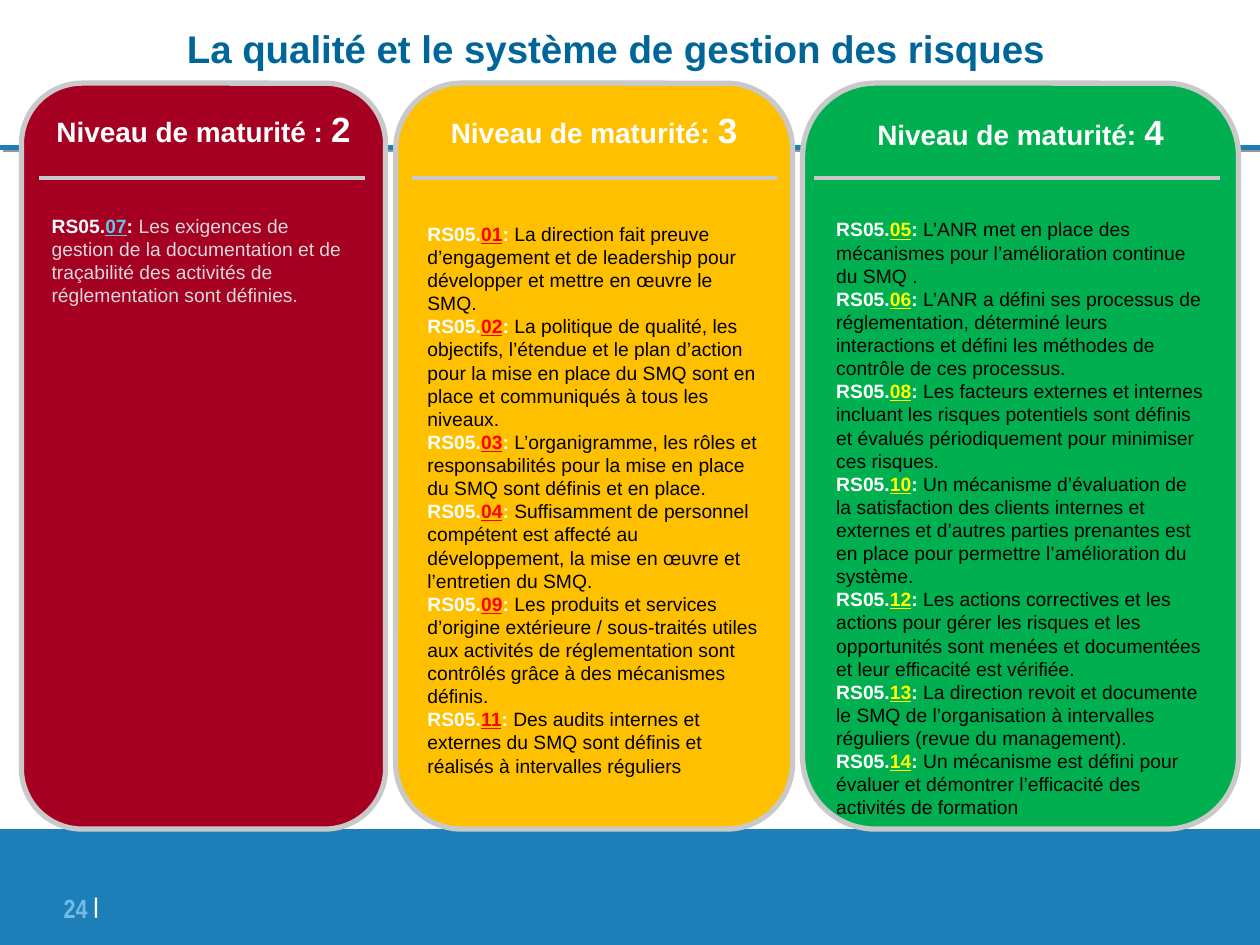
from pptx import Presentation, util as u
from pptx.dml.color import RGBColor
from pptx.enum import shapes, text
from pptx.oxml import parse_xml
from pptx.oxml.ns import nsdecls
from pptx.util import Inches

COLORS = {
    "white": "FFFFFF", "blue": "1E7FB8", "sky": "72BBE8", "title": "006699",
    "glow": "A6D8F3", "shade": "969696", "edge": "C9C9C9", "pale": "D9D9D9",
    "black": "000000", "crimson": "A50021", "amber": "FFC000", "green": "00B050",
    "cyan": "66C4EB", "red": "FF0000", "yellow": "FFFF00",
}

LEVELS = [
    dict(left=0.17, width=2.89, rule=(0.31, 2.9), fill="crimson", label="Niveau de maturité : ",
         level="2", gap=11, number="cyan", body="pale", items=[
             ("07", "Les exigences de gestion de la documentation et de traçabilité des activités "
                    "de réglementation sont définies."),
         ]),
    dict(left=3.14, width=3.15, rule=(3.27, 6.17), fill="amber", label="Niveau de maturité: ",
         level="3", gap=14, number="red", body="black", items=[
             ("01", "La direction fait preuve d’engagement et de leadership pour développer et "
                    "mettre en œuvre le SMQ."),
             ("02", "La politique de qualité, les objectifs, l’étendue et le plan d’action pour la "
                    "mise en place du SMQ sont en place et communiqués à tous les niveaux."),
             ("03", "L’organigramme, les rôles et responsabilités pour la mise en place du SMQ "
                    "sont définis et en place."),
             ("04", "Suffisamment de personnel compétent est affecté au développement, la mise en "
                    "œuvre et l’entretien du SMQ."),
             ("09", "Les produits et services d’origine extérieure / sous-traités utiles aux "
                    "activités de réglementation sont contrôlés grâce à des mécanismes définis."),
             ("11", "Des audits internes et externes du SMQ sont définis et réalisés à "
                    "intervalles réguliers"),
         ]),
    dict(left=6.37, width=3.46, rule=(6.46, 9.68), fill="green", label="Niveau de maturité: ",
         level="4", gap=11, number="yellow", body="black", items=[
             ("05", "L’ANR met en place des mécanismes pour l’amélioration continue du SMQ ."),
             ("06", "L’ANR a défini ses processus de réglementation, déterminé leurs interactions "
                    "et défini les méthodes de contrôle de ces processus."),
             ("08", "Les facteurs externes et internes incluant les risques potentiels sont "
                    "définis et évalués périodiquement pour minimiser ces risques."),
             ("10", "Un mécanisme d’évaluation de la satisfaction des clients internes et externes "
                    "et d’autres parties prenantes est en place pour permettre l’amélioration du "
                    "système."),
             ("12", "Les actions correctives et les actions pour gérer les risques et les "
                    "opportunités sont menées et documentées et leur efficacité est vérifiée."),
             ("13", "La direction revoit et documente le SMQ de l’organisation à intervalles "
                    "réguliers (revue du management)."),
             ("14", "Un mécanisme est défini pour évaluer et démontrer l’efficacité des activités "
                    "de formation"),
         ]),
]


class SlideBuilder:
    """Holds the deck style and draws each kind of element on the current page."""

    def __init__(self, deck, font="Arial"):
        self.page = deck.slides.add_slide(deck.slide_layouts[6])
        self.font = font

    def color(self, name):
        return RGBColor.from_string(COLORS[name])

    def shadow(self, color, distance, angle):
        return parse_xml(
            f'<a:effectLst {nsdecls("a")}><a:outerShdw dist="{u.Pt(distance)}" dir="{angle * 60000}" '
            f'algn="ctr" rotWithShape="0"><a:srgbClr val="{COLORS[color]}"/></a:outerShdw></a:effectLst>')

    def line(self, start, end, y, color, weight, shadow=None):
        line = self.page.shapes.add_connector(
            shapes.MSO_CONNECTOR.STRAIGHT, Inches(start), Inches(y), Inches(end), Inches(y))
        line.line.color.rgb = self.color(color)
        line.line.width = u.Pt(weight)
        effects = parse_xml(f'<a:effectLst {nsdecls("a")}/>') if shadow is None else shadow
        line._element.spPr.append(effects)

    def shape(self, kind, at, fill, edge=None):
        shape = self.page.shapes.add_shape(kind, *map(Inches, at))
        shape.shadow.inherit = False
        shape.fill.solid()
        shape.fill.fore_color.rgb = self.color(fill)
        if edge:
            shape.line.color.rgb = self.color(edge)
            shape.line.width = u.Pt(3)
        else:
            shape.line.fill.background()
        return shape

    def textbox(self, at, anchor):
        box = self.page.shapes.add_textbox(*map(Inches, at))
        frame = box.text_frame
        layout = dict(word_wrap=True, vertical_anchor=anchor, margin_left=0,
                      margin_right=0, margin_top=0, margin_bottom=0)
        for name, value in layout.items():
            setattr(frame, name, value)
        return frame.paragraphs[0]

    def span(self, para, words, size, color, **style):
        span = para.add_run()
        span.text = words
        values = dict(name=self.font, size=u.Pt(size), bold=True) | style
        for name, value in values.items():
            setattr(span.font, name, value)
        span.font.color.rgb = self.color(color)
        return span

    def card(self, left, width, rule, fill, label, level, gap, number, body, items):
        box = self.shape(shapes.MSO_SHAPE.ROUNDED_RECTANGLE, (left, 0.66, width, 5.92), fill, "edge")
        frame = box.text_frame
        frame.word_wrap = True
        frame.vertical_anchor = text.MSO_ANCHOR.TOP
        heading = frame.paragraphs[0]
        heading.alignment = text.PP_ALIGN.CENTER
        self.span(heading, label, 16, "white")
        self.span(heading, level, 20, "white")
        for size in (20, gap):
            frame.add_paragraph().font.size = u.Pt(size)
        for code, words in items:
            para = frame.add_paragraph()
            para.alignment = text.PP_ALIGN.LEFT
            self.span(para, "RS05.", 11, "white")
            self.span(para, code, 11, number, underline=True)
            self.span(para, ": ", 11, "white")
            self.span(para, words, 11, body, bold=False)
        self.line(*rule, 1.41, "edge", 2.25)


def main():
    deck = Presentation()
    deck.slide_width, deck.slide_height = Inches(10), Inches(7.5)
    builder = SlideBuilder(deck)
    builder.line(0, 10, 1.17, "blue", 3, builder.shadow("shade", 2.2, 27))
    builder.shape(shapes.MSO_SHAPE.RECTANGLE, (0, 6.58, 10, 0.92), "blue")

    footer = builder.textbox((0.39, 7, 0.39, 0.36), text.MSO_ANCHOR.TOP)
    footer.alignment = text.PP_ALIGN.RIGHT
    builder.span(footer, "24 ", 15, "sky", name="Arial Narrow")
    bar = builder.span(footer, "|", 21, "white", name="Arial Narrow")
    bar.font._element.set("baseline", "14000")

    title = builder.textbox((0.14, -0.01, 9.5, 0.79), text.MSO_ANCHOR.MIDDLE)
    title.alignment = text.PP_ALIGN.CENTER
    heading = builder.span(title, "La qualité et le système de gestion des risques", 22, "title")
    heading.font.fill._xPr.find("{*}solidFill").addnext(builder.shadow("glow", 2, 45))

    for level in LEVELS:
        builder.card(**level)
    deck.save("out.pptx")


if __name__ == "__main__":
    main()
